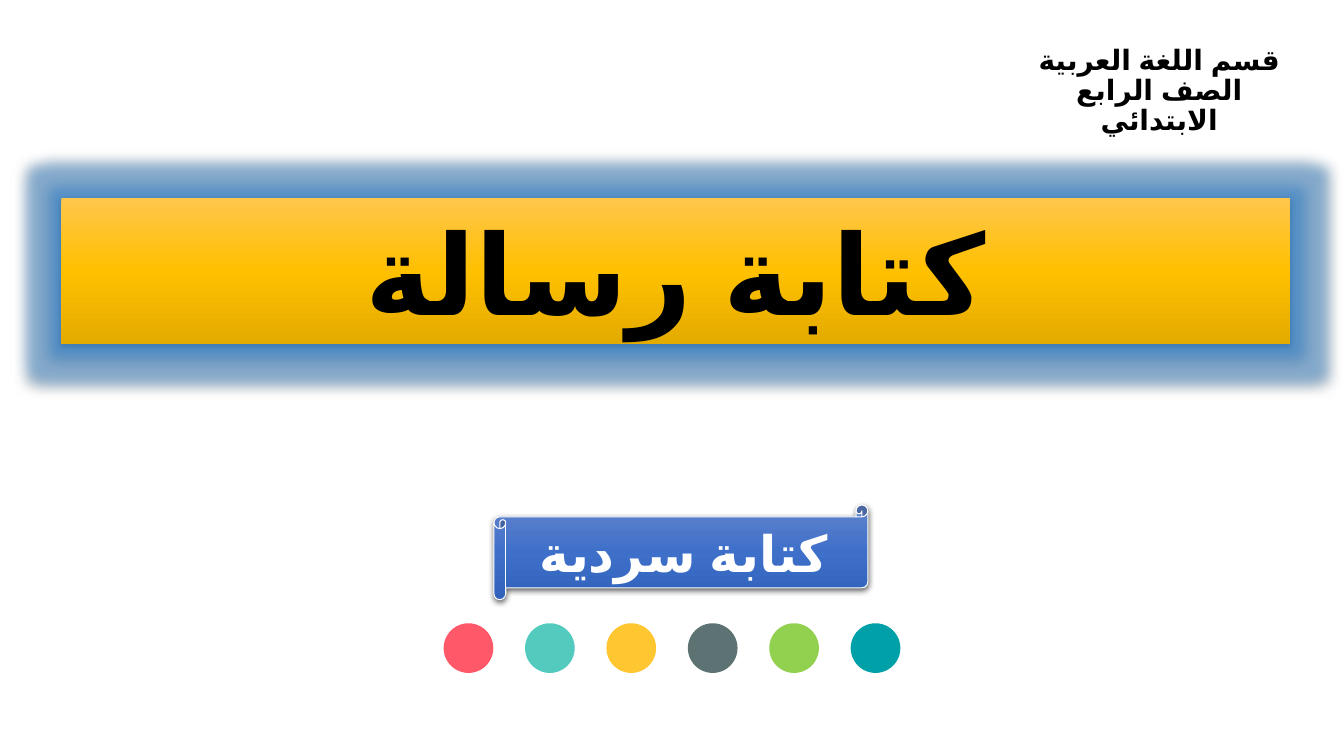
from lxml import etree
from pptx import Presentation
from pptx import util as u
from pptx.dml.color import RGBColor
from pptx.enum import lang, shapes, text
from pptx.oxml import ns

BLACK = RGBColor(0x00, 0x00, 0x00)
WHITE = RGBColor(0xFF, 0xFF, 0xFF)
GLOW_BLUE = RGBColor(0x2E, 0x8B, 0xE0)
GOLD = [RGBColor(0xFF, 0xC6, 0x4B), RGBColor(0xFF, 0xC0, 0x00), RGBColor(0xE3, 0xAB, 0x00)]
BLUE = [RGBColor(0x61, 0x83, 0xCB), RGBColor(0x3E, 0x70, 0xCA), RGBColor(0x30, 0x62, 0xBB)]
DOT_COLORS = [
    RGBColor(0xFF, 0x59, 0x69),
    RGBColor(0x52, 0xCB, 0xBE),
    RGBColor(0xFE, 0xC6, 0x30),
    RGBColor(0x5D, 0x73, 0x73),
    RGBColor(0x92, 0xD0, 0x50),
    RGBColor(0x00, 0xA0, 0xA8),
]
FONT = "Calibri"
TITLE = "كتابة رسالة"
GENRE = "كتابة سردية"
CLASS_LINES = ["قسم اللغة العربية", "الصف الرابع الابتدائي"]

TITLE_BOX = (43.9, 141.8, 877.7, 104.2)
GENRE_BOX = (352.8, 360.7, 267.1, 67.7)
CLASS_BOX = (734.4, 29.5, 187.2, 61.2)
DOT_LEFT, DOT_TOP, DOT_SIZE, DOT_STEP = 316.9, 445.2, 35.5, 58.15


def points(box):
    return [u.Pt(value) for value in box]


def add_element(parent, tag, **attributes):
    return etree.SubElement(parent, ns.qn(tag), attributes)


def add_color(parent, color, opacity=100):
    element = add_element(parent, "a:srgbClr", val=str(color))
    add_element(element, "a:alpha", val=str(opacity * 1000))


def fill_gradient(shape, colors):
    shape.fill.gradient()
    shape.fill.gradient_angle = 270
    stops = shape._element.spPr.find(".//" + ns.qn("a:gsLst"))
    for stop in list(stops):
        stops.remove(stop)
    for index, color in enumerate(colors):
        add_color(add_element(stops, "a:gs", pos=str(index * 50000)), color)


def add_effects(shape, glow_radius=0):
    shape.shadow.inherit = False
    effects = shape._element.spPr.find(ns.qn("a:effectLst"))
    if glow_radius:
        glow = add_element(effects, "a:glow", rad=str(u.Pt(glow_radius)))
        add_color(glow, GLOW_BLUE, 40)
    shadow = add_element(effects, "a:outerShdw", blurRad=str(u.Pt(4.5)),
                         dist=str(u.Pt(1.5)), dir="5400000", rotWithShape="0")
    add_color(shadow, BLACK, 63)


def write_lines(shape, lines, size, color, anchor, right_to_left=False):
    frame = shape.text_frame
    frame.word_wrap = True
    frame.vertical_anchor = anchor
    for index, line in enumerate(lines):
        paragraph = frame.add_paragraph() if index else frame.paragraphs[0]
        paragraph.alignment = text.PP_ALIGN.CENTER
        if right_to_left:
            paragraph.line_spacing = 0.9
            paragraph._p.get_or_add_pPr().set("rtl", "1")
        run = paragraph.add_run()
        run.text = line
        run.font.size = u.Pt(size)
        run.font.bold = True
        run.font.color.rgb = color
        run.font.name = FONT
        run.font.language_id = lang.MSO_LANGUAGE_ID.ARABIC_UAE


def main():
    presentation = Presentation()
    presentation.slide_width, presentation.slide_height = u.Pt(960), u.Pt(540)
    slide = presentation.slides.add_slide(presentation.slide_layouts[6])

    title = slide.shapes.add_shape(shapes.MSO_SHAPE.RECTANGLE, *points(TITLE_BOX))
    fill_gradient(title, GOLD)
    title.line.fill.background()
    add_effects(title, glow_radius=18)
    write_lines(title, [TITLE], 80, BLACK, text.MSO_ANCHOR.TOP)

    dots = slide.shapes.add_group_shape()
    for index, color in enumerate(DOT_COLORS):
        box = (DOT_LEFT + index * DOT_STEP, DOT_TOP, DOT_SIZE, DOT_SIZE)
        dot = dots.shapes.add_shape(shapes.MSO_SHAPE.OVAL, *points(box))
        dot.fill.solid()
        dot.fill.fore_color.rgb = color
        dot.line.fill.background()
        dot.shadow.inherit = False

    class_label = slide.shapes.add_textbox(*points(CLASS_BOX))
    write_lines(class_label, CLASS_LINES, 20, BLACK, text.MSO_ANCHOR.TOP, right_to_left=True)

    genre = slide.shapes.add_shape(shapes.MSO_SHAPE.HORIZONTAL_SCROLL, *points(GENRE_BOX))
    fill_gradient(genre, BLUE)
    genre.line.color.rgb = WHITE
    genre.line.width = u.Pt(0.75)
    add_effects(genre)
    write_lines(genre, [GENRE], 36, WHITE, text.MSO_ANCHOR.MIDDLE)

    presentation.save("out.pptx")


if __name__ == "__main__":
    main()
